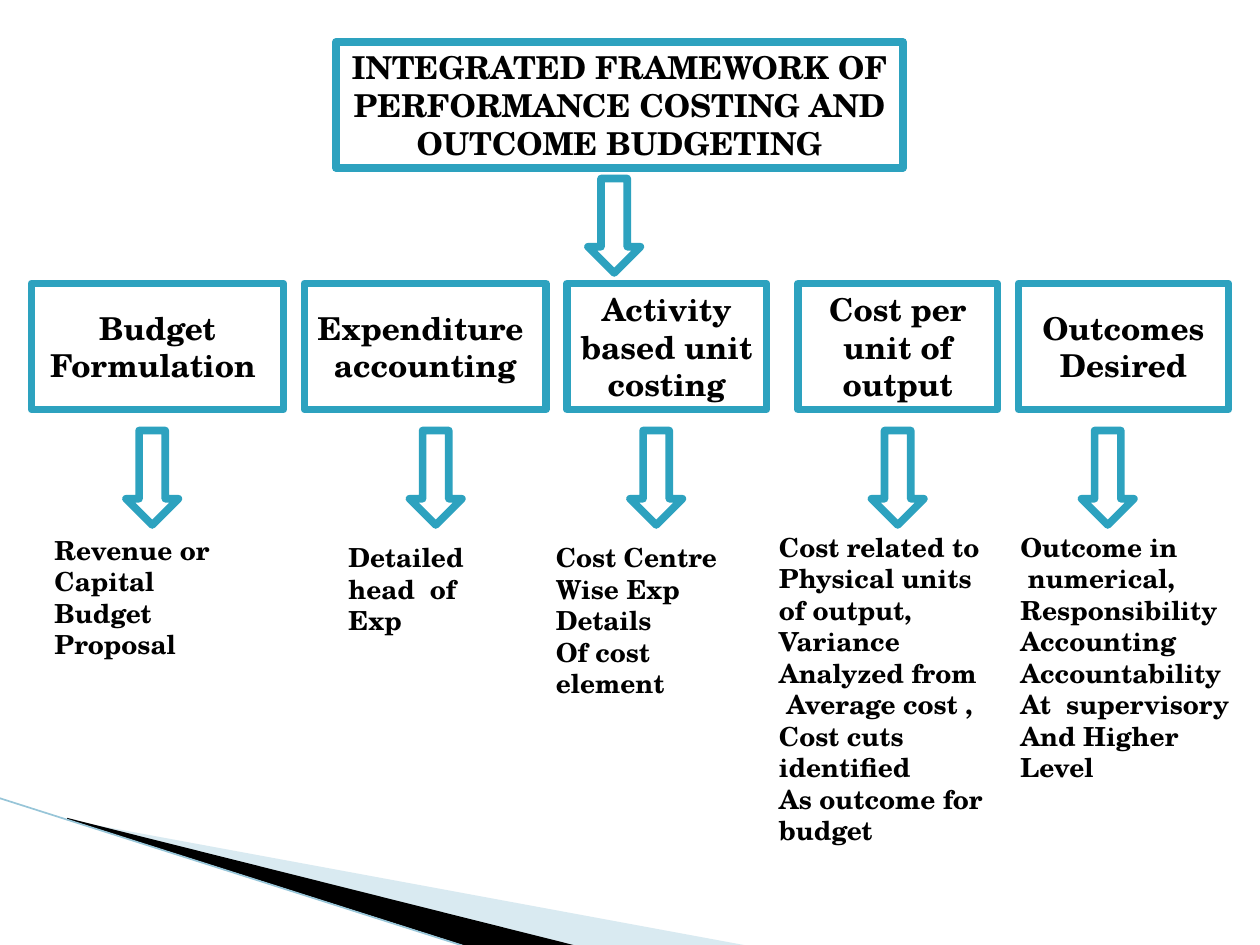
from lxml import etree
from pptx import Presentation
from pptx.dml.color import RGBColor
from pptx.enum.shapes import MSO_CONNECTOR as Connector, MSO_SHAPE as Shape
from pptx.enum.text import MSO_ANCHOR as Anchor, MSO_AUTO_SIZE as AutoSize, PP_ALIGN as Align
from pptx.oxml.ns import qn
from pptx.util import Inches, Pt

COLORS = {"teal": "2DA2BF", "white": "FFFFFF", "black": "000000",
          "pale": "A0CBDC", "edge": "97C5D8"}
FONT = "TeX Gyre Schola"
UNIT = Inches(1) / 12  # grid of 120 columns by 90 rows
COLUMNS, ROWS = 120, 90
ARROW_WIDTH, ARROW_HEIGHT = 5, 9
HEADER_TOP, HEADER_HEIGHT, ARROW_TOP = 27, 12, 41

# header box (left, width), arrow left, notes box (left, top, width, height)
STAGES = [
    (3, 24, ["Budget", "Formulation "], 12, (4, 50.25, 20, 13.3),
     ["Revenue or Capital", "Budget Proposal"]),
    (29, 23, ["Expenditure ", "accounting"], 39, (32, 51, 15, 10.3),
     ["Detailed", "head  of Exp"]),
    (54, 19, ["Activity based unit costing"], 60, (51.75, 51, 19.3, 16.3),
     ["Cost Centre", "Wise Exp", "Details", "Of cost element"]),
    (76, 19, ["Cost per unit of output"], 83, (73, 50, 25, 31.5),
     ["Cost related to", "Physical units", "of output, Variance", "Analyzed from",
      " Average cost ,", "Cost cuts  identified", "As outcome for budget"]),
    (97, 20, ["Outcomes", "Desired"], 103, (96, 50, 24, 25.4),
     ["Outcome in", " numerical,", "Responsibility", "Accounting",
      "Accountability", "At  supervisory", "And Higher Level"]),
]


def grid(*values):
    return [round(value * UNIT) for value in values]


def color(name):
    return RGBColor.from_string(COLORS[name])


def write(frame, lines, size, align):
    frame.word_wrap = True
    for index, line in enumerate(lines):
        paragraph = frame.paragraphs[0] if index == 0 else frame.add_paragraph()
        paragraph.text = line
        paragraph.alignment = align
        font = paragraph.font
        font.name, font.size, font.bold = FONT, Pt(size), True
        font.color.rgb = color("black")


def outlined(slide, preset, box):
    shape = slide.shapes.add_shape(preset, *grid(*box))
    shape.shadow.inherit = False
    shape.fill.solid()
    shape.fill.fore_color.rgb = color("white")
    shape.line.color.rgb = color("teal")
    shape.line.width = Pt(4.33)
    return shape


def heading(slide, box, lines):
    frame = outlined(slide, Shape.RECTANGLE, box).text_frame
    frame.vertical_anchor = Anchor.MIDDLE
    write(frame, lines, 18, Align.CENTER)


def down_arrow(slide, left, top):
    outlined(slide, Shape.DOWN_ARROW, (left, top, ARROW_WIDTH, ARROW_HEIGHT))


def notes(slide, box, lines):
    frame = slide.shapes.add_textbox(*grid(*box)).text_frame
    write(frame, lines, 15, Align.LEFT)
    frame.auto_size = AutoSize.SHAPE_TO_FIT_TEXT


def stage(slide, left, width, title, arrow_left, notes_box, lines):
    heading(slide, (left, HEADER_TOP, width, HEADER_HEIGHT), title)
    down_arrow(slide, arrow_left, ARROW_TOP)
    notes(slide, notes_box, lines)


def wedge(slide, box, points, fill, alpha=None):
    """Filled outline whose points are shares of the box."""
    left, top, width, height = grid(*box)
    corners = [(round(left + x * width), round(top + y * height)) for x, y in points]
    builder = slide.shapes.build_freeform(*corners[0])
    builder.add_line_segments(corners[1:], close=True)
    shape = builder.convert_to_shape()
    shape.shadow.inherit = False
    shape.fill.solid()
    shape.fill.fore_color.rgb = color(fill)
    shape.line.fill.background()
    if alpha:
        tint = shape.fill._xPr.find(qn("a:solidFill"))[0]
        etree.SubElement(tint, qn("a:alpha"), val=str(alpha * 1000))


def corner_ribbon(slide, box):
    left, top, width, height = box
    # Pale and black wedges
    wedge(slide, (left + 6.7, top + 2, width - 6.7, height - 2),
          [(0, 0.01), (1, 1), (0.74, 1), (0, 0)], "pale", 40)
    wedge(slide, (left + 6.5, top + 1.9, 48.5, height - 1.8),
          [(0, 0), (1, 0.99), (0.79, 1), (0, 0.01)], "black")
    # Thin lower edge
    edge = slide.shapes.add_connector(
        Connector.STRAIGHT, *grid(left, top, left + 44.6, top + height + 0.1))
    edge.line.color.rgb = color("edge")
    edge.line.width = Pt(0.95)
    etree.SubElement(edge._element.spPr, qn("a:effectLst"))


def main():
    presentation = Presentation()
    presentation.slide_width, presentation.slide_height = grid(COLUMNS, ROWS)
    slide = presentation.slides.add_slide(presentation.slide_layouts[6])
    corner_ribbon(slide, (-0.1, 76, 71.5, 14.1))
    # Title and its arrow
    heading(slide, (32, 4, 54, 12), ["INTEGRATED FRAMEWORK OF ",
                                     "PERFORMANCE COSTING AND",
                                     "OUTCOME BUDGETING"])
    down_arrow(slide, 56, 17)
    # Five stages
    for parts in STAGES:
        stage(slide, *parts)
    presentation.save("out.pptx")


if __name__ == "__main__":
    main()
